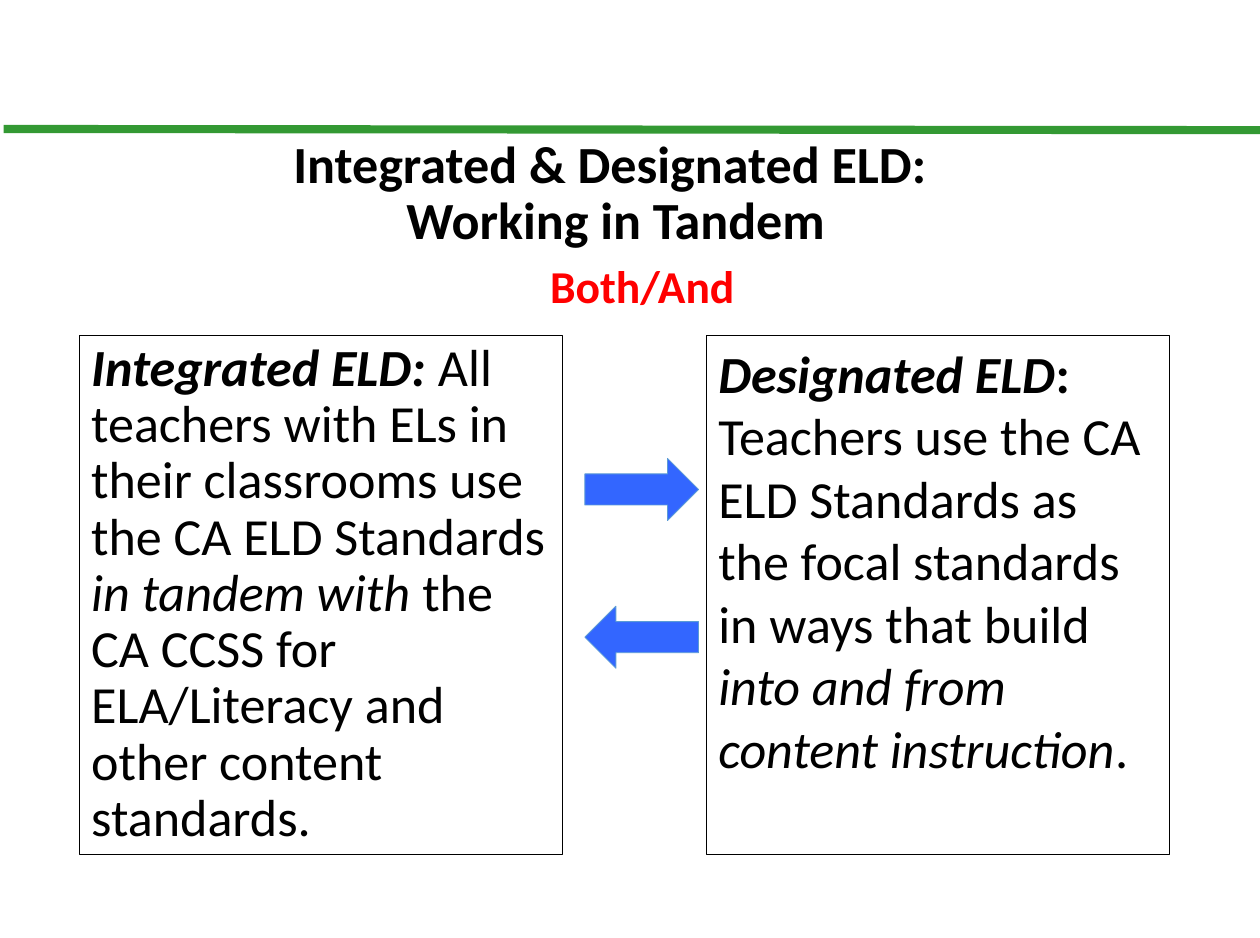
import pptx
import pptx.util
import pptx.dml.color
import pptx.enum.shapes
import pptx.enum.text
import pptx.oxml.ns
from lxml import etree

PX = 9144  # EMU per px, 100 px to the inch
COLORS = {"black": "000000", "white": "FFFFFF", "red": "FF0000",
          "rule": "339933", "arrow": "3366FF", "arrow_edge": "5B9BD5"}
SHAPES = pptx.enum.shapes.MSO_SHAPE
ALIGN = pptx.enum.text.PP_ALIGN


def px(*lengths):
    return [pptx.util.Emu(n * PX) for n in lengths]


def rgb(name):
    return pptx.dml.color.RGBColor.from_string(COLORS[name])


def style_font(paragraph, size, color):
    font = paragraph.font
    font.name = "Calibri"
    font.size = pptx.util.Pt(size)
    font.color.rgb = rgb(color)
    return font


def add_rule(slide, start, end):
    rule = slide.shapes.add_connector(
        pptx.enum.shapes.MSO_CONNECTOR.STRAIGHT, *px(*start, *end))
    rule.line.color.rgb = rgb("rule")
    rule.line.width = pptx.util.Pt(5)
    etree.SubElement(rule._element.spPr, pptx.oxml.ns.qn("a:effectLst"))


def add_heading(slide, box, text, size, color):
    frame = slide.shapes.add_textbox(*px(*box)).text_frame
    frame.word_wrap = True
    paragraph = frame.paragraphs[0]
    paragraph.text = text
    paragraph.alignment = ALIGN.CENTER
    paragraph.line_spacing = 0.9
    style_font(paragraph, size, color).bold = True


def add_block(slide, kind, box, fill, edge, edge_width):
    block = slide.shapes.add_shape(kind, *px(*box))
    block.shadow.inherit = False
    block.fill.solid()
    block.fill.fore_color.rgb = rgb(fill)
    block.line.color.rgb = rgb(edge)
    block.line.width = pptx.util.Pt(edge_width)
    return block


def add_definition(slide, left, width, line_spacing, pieces):
    """Add a bordered box; each piece is (text, bold, italic)."""
    block = add_block(slide, SHAPES.RECTANGLE, (left, 286, width, 443),
                      "white", "black", 0.75)
    frame = block.text_frame
    frame.word_wrap = True
    frame.vertical_anchor = pptx.enum.text.MSO_ANCHOR.TOP
    paragraph = frame.paragraphs[0]
    paragraph.alignment = ALIGN.LEFT
    paragraph.line_spacing = line_spacing
    style_font(paragraph, 32, "black")
    for text, bold, italic in pieces:
        run = paragraph.add_run()
        run.text = text
        run.font.bold = bold
        run.font.italic = italic


def main():
    deck = pptx.Presentation()
    deck.slide_width, deck.slide_height = px(1075, 800)
    slide = deck.slides.add_slide(deck.slide_layouts[6])

    add_rule(slide, (3, 110), (1075, 111))
    add_heading(slide, (34, 113, 983, 111),
                "Integrated & Designated ELD: \vWorking in Tandem", 32, "black")
    add_heading(slide, (185, 220, 726, 38), "Both/And", 28, "red")

    add_definition(slide, 68, 412, 0.9, [
        ("Integrated ELD: ", True, True),
        ("All teachers with ELs in their classrooms use the CA ELD Standards ",
         False, False),
        ("in tandem with", False, True),
        (" the CA CCSS for ELA/Literacy and other content standards.",
         False, False),
    ])
    add_definition(slide, 603, 395, 1.0, [
        ("Designated ELD", True, True),
        (": ", True, False),
        ("Teachers use the CA ELD Standards as the focal standards "
         "in ways that build ", False, False),
        ("into and from content instruction", False, True),
        (".", False, False),
    ])

    for kind, top in ((SHAPES.RIGHT_ARROW, 391), (SHAPES.LEFT_ARROW, 517)):
        add_block(slide, kind, (499, top, 97, 53), "arrow", "arrow_edge", 0.5)

    deck.save("out.pptx")


if __name__ == "__main__":
    main()
